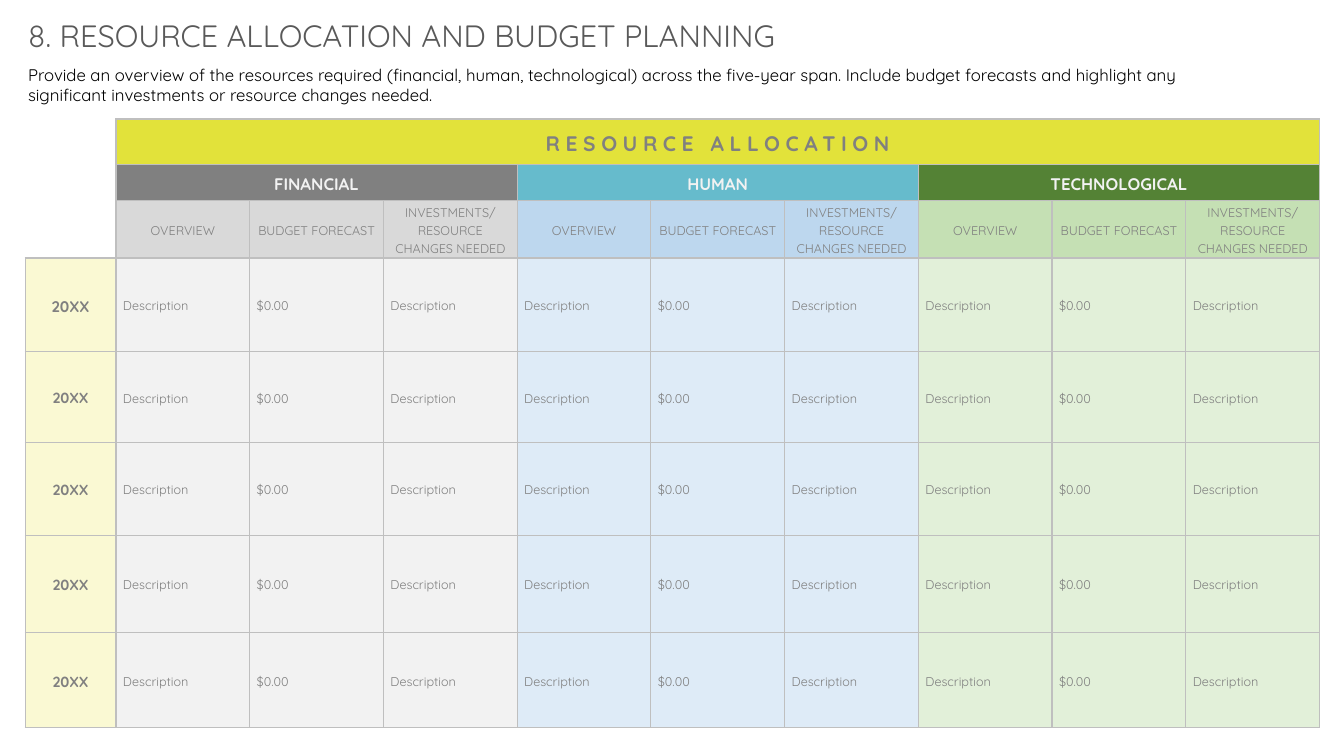
from copy import deepcopy

from lxml.etree import SubElement
from pptx import Presentation
from pptx.dml.color import RGBColor
from pptx.enum.text import MSO_ANCHOR as Anchor, MSO_AUTO_SIZE as AutoSize, PP_ALIGN as Align
from pptx.oxml.ns import qn
from pptx.util import Pt

EMU_PER_PX = 9144
FONT = "Quicksand"
COLORS = {
    "title": "595959", "body": "000000", "text": "808080", "light": "F2F2F2",
    "border": "BFBFBF", "banner": "E2E23A", "year": "FAF9D3",
}
GROUPS = [
    ("FINANCIAL", {"head": "808080", "column": "D9D9D9", "entry": "F2F2F2"}),
    ("HUMAN", {"head": "66BBCC", "column": "BDD7EE", "entry": "DEEBF7"}),
    ("TECHNOLOGICAL", {"head": "548235", "column": "C5E0B4", "entry": "E2F0D9"}),
]
COLUMNS = [
    ("OVERVIEW", "Description"),
    ("BUDGET FORECAST", "$0.00"),
    ("INVESTMENTS/\nRESOURCE CHANGES NEEDED", "Description"),
]
HEADER_HEIGHTS = [45, 36, 57]
YEAR_HEIGHTS = [93, 90, 92, 97, 94]
YEAR_SIZES = [11, 10.5, 10.5, 10.5, 10.5]
YEAR_WIDTH, GROUPS_WIDTH = 90, 1194
TITLE = "8. RESOURCE ALLOCATION AND BUDGET PLANNING"
INTRODUCTION = (
    "Provide an overview of the resources required (financial, human, technological) "
    "across the five-year span. Include budget forecasts and highlight any significant "
    "investments or resource changes needed."
)


def px(value):
    return value * EMU_PER_PX


def write(paragraph, text, size, color, bold=False, spacing=0):
    paragraph.text = text
    for run in paragraph.runs:
        run.font.name = FONT
        run.font.size = Pt(size)
        run.font.bold = bold
        run.font.color.rgb = RGBColor.from_string(color)
        if spacing:
            run._r.get_or_add_rPr().set("spc", str(spacing * 100))
    for line_break in paragraph._p.findall(qn("a:br")):
        line_break.append(deepcopy(paragraph.runs[0]._r.rPr))


def fill_text_box(shape, left, top, width, height, text, size, color):
    shape.left, shape.top = px(left), px(top)
    shape.width, shape.height = px(width), px(height)
    frame = shape.text_frame
    frame.word_wrap = True
    frame.auto_size = AutoSize.SHAPE_TO_FIT_TEXT
    frame.vertical_anchor = Anchor.TOP
    paragraph = frame.paragraphs[0]
    write(paragraph, text, size, color)
    paragraph.alignment = Align.LEFT


def set_borders(cell, sides):
    properties = cell._tc.get_or_add_tcPr()
    for side in "LRTB":
        line = SubElement(properties, qn(f"a:ln{side}"), w=str(Pt(1)))
        if side in sides:
            fill = SubElement(line, qn("a:solidFill"))
            SubElement(fill, qn("a:srgbClr"), val=COLORS["border"])
        else:
            SubElement(line, qn("a:noFill"))


def prepare_cells(table):
    for row_index, row in enumerate(table.rows):
        for column_index, cell in enumerate(row.cells):
            sides = "LRTB"
            if column_index == 0 and row_index < len(HEADER_HEIGHTS):
                sides = "RB" if row_index == len(HEADER_HEIGHTS) - 1 else "R"
            set_borders(cell, sides)
            cell.fill.background()
            cell.margin_left = cell.margin_right = px(7)
            cell.margin_top = cell.margin_bottom = 0
            cell.vertical_anchor = Anchor.MIDDLE


def fill_cell(cell, text, fill, size, color=COLORS["text"], bold=False,
              align=Align.CENTER, spacing=0):
    cell.fill.solid()
    cell.fill.fore_color.rgb = RGBColor.from_string(fill)
    paragraph = cell.text_frame.paragraphs[0]
    write(paragraph, text, size, color, bold, spacing)
    paragraph.alignment = align
    paragraph.line_spacing = 1.15


def merge_right(table, row, column, count):
    table.cell(row, column).merge(table.cell(row, column + count - 1))
    return table.cell(row, column)


def add_resource_table(slide):
    heights = HEADER_HEIGHTS + YEAR_HEIGHTS
    column_count = len(GROUPS) * len(COLUMNS)
    table = slide.shapes.add_table(
        len(heights), column_count + 1, px(25), px(118),
        px(YEAR_WIDTH + GROUPS_WIDTH), px(sum(heights))).table
    table.first_row = table.horz_banding = False
    for row, height in zip(table.rows, heights):
        row.height = px(height)
    for index, column in enumerate(table.columns):
        column.width = px(GROUPS_WIDTH) // column_count if index else px(YEAR_WIDTH)
    prepare_cells(table)

    banner = merge_right(table, 0, 1, column_count)
    fill_cell(banner, "RESOURCE ALLOCATION", COLORS["banner"], 15, bold=True, spacing=4)
    for row, size in enumerate(YEAR_SIZES, len(HEADER_HEIGHTS)):
        fill_cell(table.cell(row, 0), "20XX", COLORS["year"], size, bold=True)
    for group_index, (name, shades) in enumerate(GROUPS):
        first = 1 + group_index * len(COLUMNS)
        head = merge_right(table, 1, first, len(COLUMNS))
        fill_cell(head, name, shades["head"], 12, COLORS["light"], bold=True)
        for column, (heading, entry) in enumerate(COLUMNS, first):
            fill_cell(table.cell(2, column), heading, shades["column"], 9)
            for row in range(len(HEADER_HEIGHTS), len(heights)):
                fill_cell(table.cell(row, column), entry, shades["entry"], 9, align=Align.LEFT)


def main():
    presentation = Presentation()
    presentation.slide_width, presentation.slide_height = px(1333), px(750)
    slide = presentation.slides.add_slide(presentation.slide_layouts[5])
    fill_text_box(slide.shapes.title, 18, 12, 980, 47, TITLE, 22, COLORS["title"])
    introduction = slide.shapes.add_textbox(0, 0, 0, 0)
    fill_text_box(introduction, 18, 59, 1206, 50, INTRODUCTION, 12, COLORS["body"])
    add_resource_table(slide)
    presentation.save("out.pptx")


if __name__ == "__main__":
    main()
